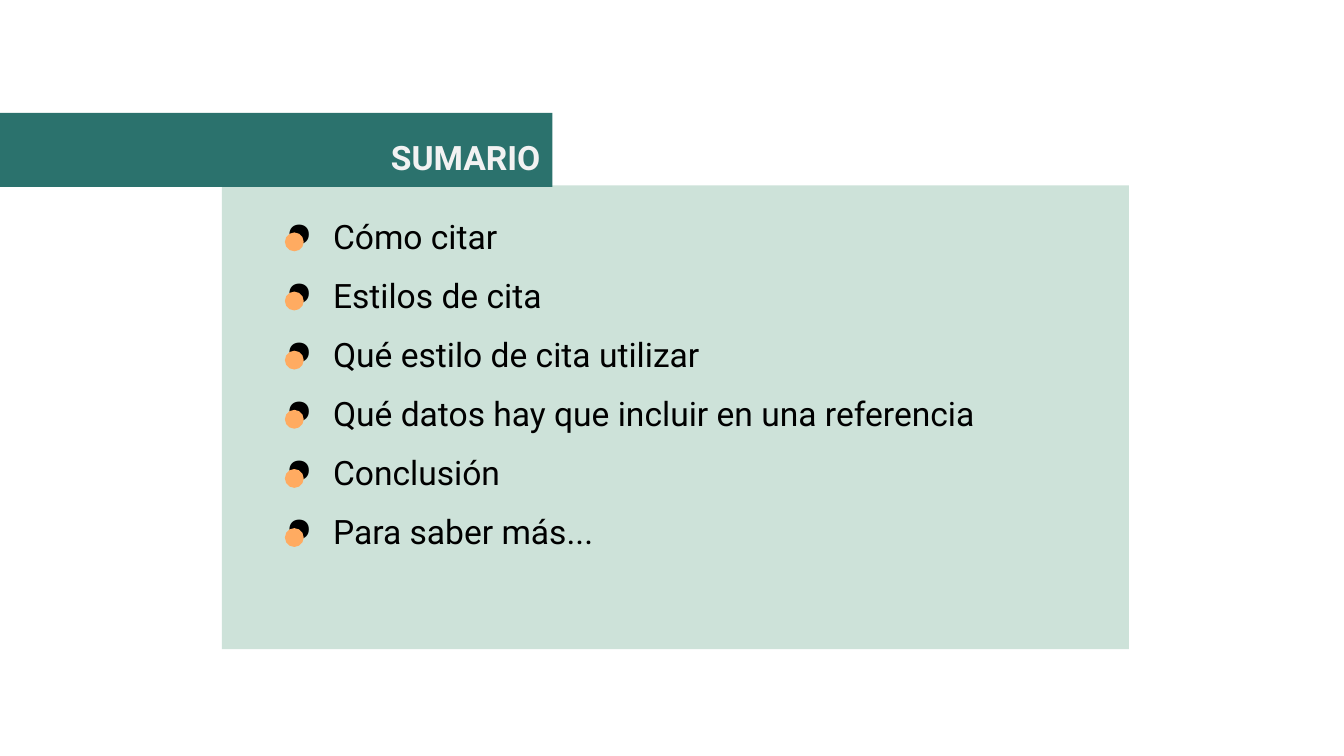
from dataclasses import dataclass

from lxml.etree import SubElement
from pptx import Presentation
from pptx.dml.color import RGBColor
from pptx.enum.shapes import MSO_SHAPE
from pptx.enum.text import MSO_ANCHOR, PP_ALIGN
from pptx.oxml.ns import qn
from pptx.slide import Slide
from pptx.text.text import TextFrame, _Paragraph
from pptx.util import Inches, Pt


@dataclass(frozen=True)
class Theme:
    panel: RGBColor = RGBColor(0xCD, 0xE2, 0xD9)
    banner: RGBColor = RGBColor(0x2B, 0x72, 0x6D)
    dot: RGBColor = RGBColor(0xFF, 0xAB, 0x61)
    heading: RGBColor = RGBColor(0xF2, 0xF2, 0xF2)
    body: RGBColor = RGBColor(0, 0, 0)
    font: str = "Roboto"
    size: Pt = Pt(18)
    gap: Pt = Pt(10)


@dataclass(frozen=True)
class Area:
    left: float
    top: float
    width: float
    height: float

    def lengths(self) -> tuple[Inches, ...]:
        return tuple(map(Inches, (self.left, self.top, self.width, self.height)))


THEME = Theme()
PANEL = Area(1.65, 1.38, 6.75, 3.45)
BANNER = Area(0, 0.84, 4.11, 0.55)
HEADING = Area(1.8, 0.92, 2.32, 0.36)
TOPIC_LIST = Area(1.88, 1.51, 6.34, 3.31)
FIRST_DOT = Area(2.12, 1.73, 0.14, 0.14)
DOT_PITCH = 0.44
TOPICS = [
    "Cómo citar",
    "Estilos de cita",
    "Qué estilo de cita utilizar",
    "Qué datos hay que incluir en una referencia",
    "Conclusión",
    "Para saber más...",
]


def draw_block(slide: Slide, kind: MSO_SHAPE, area: Area, color: RGBColor) -> None:
    block = slide.shapes.add_shape(kind, *area.lengths())
    block.shadow.inherit = False
    block.fill.solid()
    block.fill.fore_color.rgb = color
    block.line.fill.background()


def open_text(slide: Slide, area: Area) -> TextFrame:
    frame = slide.shapes.add_textbox(*area.lengths()).text_frame
    layout = {
        "word_wrap": True,
        "vertical_anchor": MSO_ANCHOR.TOP,
        "margin_left": Inches(0.1),
        "margin_top": Inches(0.1),
        "margin_right": Inches(0.1),
        "margin_bottom": Inches(0.1),
    }
    for attribute, value in layout.items():
        setattr(frame, attribute, value)
    return frame


def write(paragraph: _Paragraph, words: str, color: RGBColor, bold: bool = False) -> None:
    run = paragraph.add_run()
    run.text = words
    style = {"name": THEME.font, "size": THEME.size, "bold": bold}
    for attribute, value in style.items():
        setattr(run.font, attribute, value)
    run.font.color.rgb = color


def add_bullet(paragraph: _Paragraph) -> None:
    properties = paragraph._p.get_or_add_pPr()
    for attribute, value in {"marL": Inches(0.5), "indent": Inches(-0.35)}.items():
        properties.set(attribute, str(value))
    bullet_color = SubElement(properties, qn("a:buClr"))
    SubElement(bullet_color, qn("a:srgbClr"), val=str(THEME.body))
    SubElement(properties, qn("a:buChar"), char="●")


def draw_heading(slide: Slide) -> None:
    paragraph = open_text(slide, HEADING).paragraphs[0]
    paragraph.alignment = PP_ALIGN.RIGHT
    write(paragraph, "SUMARIO", THEME.heading, bold=True)


def draw_topics(slide: Slide) -> None:
    frame = open_text(slide, TOPIC_LIST)
    for index, topic in enumerate(TOPICS):
        paragraph = frame.add_paragraph() if index else frame.paragraphs[0]
        add_bullet(paragraph)
        if index:
            paragraph.space_before = THEME.gap
        write(paragraph, topic, THEME.body)
    paragraph.space_after = THEME.gap


def draw_dots(slide: Slide) -> None:
    for index in range(len(TOPICS)):
        top = FIRST_DOT.top + index * DOT_PITCH
        dot = Area(FIRST_DOT.left, top, FIRST_DOT.width, FIRST_DOT.height)
        draw_block(slide, MSO_SHAPE.OVAL, dot, THEME.dot)


def main() -> None:
    presentation = Presentation()
    presentation.slide_width = Inches(10)
    presentation.slide_height = Inches(10) * 9 // 16
    slide = presentation.slides.add_slide(presentation.slide_layouts[6])
    draw_block(slide, MSO_SHAPE.RECTANGLE, PANEL, THEME.panel)
    draw_block(slide, MSO_SHAPE.RECTANGLE, BANNER, THEME.banner)
    draw_heading(slide)
    draw_topics(slide)
    draw_dots(slide)
    presentation.save("out.pptx")


if __name__ == "__main__":
    main()
